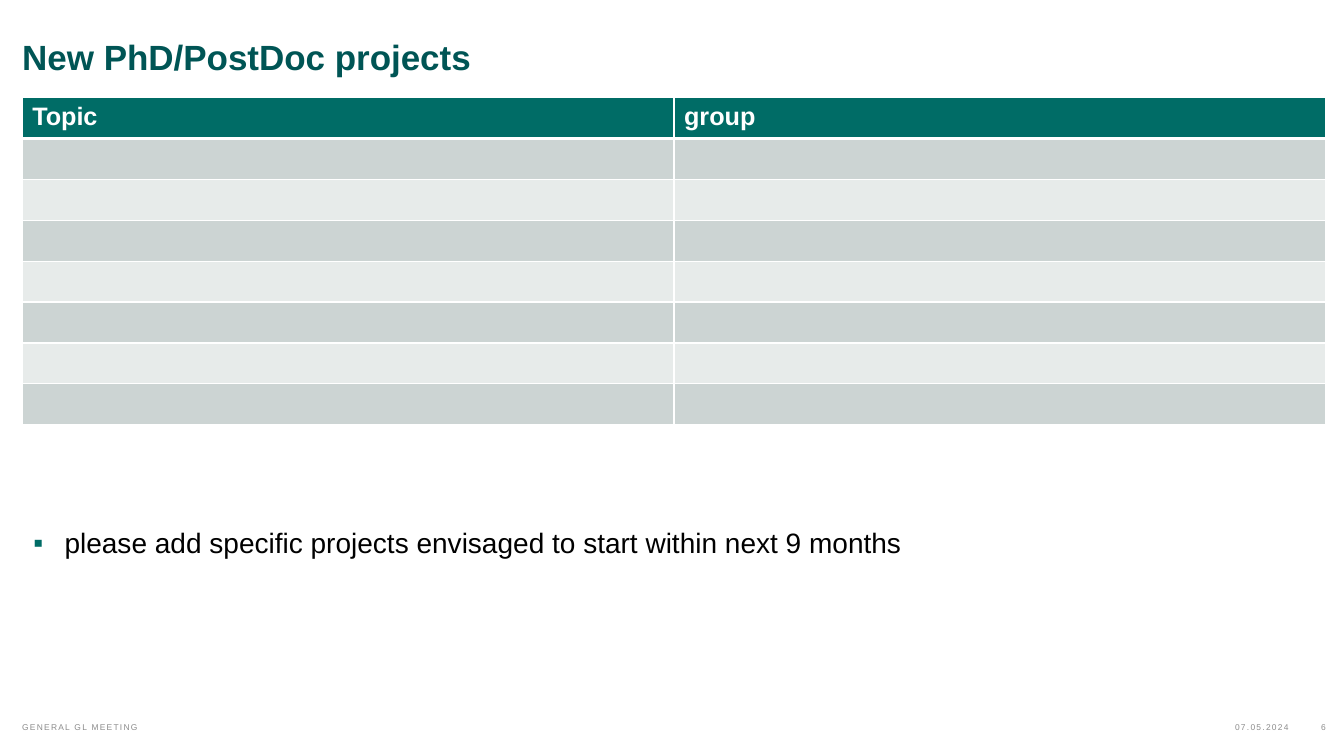
from dataclasses import dataclass

from lxml.etree import SubElement
from pptx import Presentation
from pptx.dml.color import RGBColor
from pptx.enum.text import MSO_ANCHOR, MSO_AUTO_SIZE, PP_ALIGN
from pptx.oxml import parse_xml
from pptx.oxml.ns import nsdecls, qn
from pptx.util import Inches, Pt


@dataclass(frozen=True)
class Theme:
    font: str = "Arial"
    title_color: str = "005555"
    accent: str = "006C66"
    bands: tuple = ("CCD4D3", "E7EBEA")
    white: str = "FFFFFF"
    text: str = "000000"
    muted: str = "8C8C8C"
    title_size: float = 25
    body_size: float = 20
    table_size: float = 18
    footer_size: float = 6


THEME = Theme()
LEFT = 0.22
CONTENT_WIDTH = 12.93
BODY_ROWS = 7


def place(shape, box):
    shape.left, shape.top, shape.width, shape.height = map(Inches, box)


def prepare_frame(shape, anchor=MSO_ANCHOR.TOP, horizontal=0, vertical=0):
    """Set wrapping, anchor and insets, and return the text frame."""
    frame = shape.text_frame
    frame.word_wrap = True
    frame.auto_size = MSO_AUTO_SIZE.NONE
    frame.vertical_anchor = anchor
    frame.margin_left = frame.margin_right = Inches(horizontal)
    frame.margin_top = frame.margin_bottom = Inches(vertical)
    return frame


def add_run(paragraph, text, size, color, bold=False):
    run = paragraph.add_run()
    run.text = text
    run.font.name = THEME.font
    run.font.size = Pt(size)
    run.font.bold = bold
    run.font.color.rgb = RGBColor.from_string(color)
    return run


def fill_title(shape, box, text):
    place(shape, box)
    paragraph = prepare_frame(shape).paragraphs[0]
    paragraph.alignment = PP_ALIGN.LEFT
    paragraph.line_spacing = Pt(28)
    paragraph.space_after = Pt(18)
    add_run(paragraph, text, THEME.title_size, THEME.title_color, bold=True)


def fill_bullet(shape, box, text):
    place(shape, box)
    frame = prepare_frame(shape, horizontal=0.11, vertical=0.05)
    paragraph = frame.paragraphs[0]
    paragraph.line_spacing = 1.5
    paragraph.space_before = Pt(0)
    properties = paragraph._p.get_or_add_pPr()
    properties.set("marL", str(Inches(0.31)))
    properties.set("indent", str(-Inches(0.31)))
    bullet_color = SubElement(properties, qn("a:buClr"))
    SubElement(bullet_color, qn("a:srgbClr"), val=THEME.accent)
    SubElement(properties, qn("a:buFont"), typeface=THEME.font)
    SubElement(properties, qn("a:buChar"), char="▪")
    add_run(paragraph, text, THEME.body_size, THEME.text)


def style_cell(cell, fill, bottom_width):
    """Fill the cell and draw its white borders."""
    cell.fill.solid()
    cell.fill.fore_color.rgb = RGBColor.from_string(fill)
    properties = cell._tc.get_or_add_tcPr()
    widths = {"lnL": 1, "lnR": 1, "lnT": 1, "lnB": bottom_width}
    for position, (side, width) in enumerate(widths.items()):
        border = parse_xml(
            f'<a:{side} {nsdecls("a")} w="{Pt(width)}"><a:solidFill>'
            f'<a:srgbClr val="{THEME.white}"/></a:solidFill></a:{side}>'
        )
        properties.insert(position, border)


def add_project_table(slide, box, headings, body_rows):
    table = slide.shapes.add_table(
        body_rows + 1, len(headings), *map(Inches, box)
    ).table
    for column, heading in enumerate(headings):
        header = table.cell(0, column)
        style_cell(header, THEME.accent, bottom_width=3)
        paragraph = header.text_frame.paragraphs[0]
        add_run(paragraph, heading, THEME.table_size, THEME.white, bold=True)
        for row in range(1, body_rows + 1):
            band = THEME.bands[(row - 1) % len(THEME.bands)]
            style_cell(table.cell(row, column), band, bottom_width=1)
        # The header's thick rule is shared with the first body row.
        table.cell(1, column)._tc.tcPr.find(qn("a:lnT")).set("w", str(Pt(3)))


def add_footer(slide, box, meeting, date, number):
    left, top, width, height = box
    number_width = 0.37
    date_width = 8.27
    number_left = left + width - number_width
    parts = (
        (meeting, left, 4, PP_ALIGN.LEFT),
        (date, number_left - date_width, date_width, PP_ALIGN.RIGHT),
        (number, number_left, number_width, PP_ALIGN.RIGHT),
    )
    for text, part_left, part_width, alignment in parts:
        part_box = (part_left, top, part_width, height)
        shape = slide.shapes.add_textbox(*map(Inches, part_box))
        paragraph = prepare_frame(shape, MSO_ANCHOR.BOTTOM).paragraphs[0]
        paragraph.alignment = alignment
        run = add_run(paragraph, text, THEME.footer_size, THEME.muted)
        run._r.get_or_add_rPr().set("spc", "90")


def build_projects_slide(presentation):
    slide = presentation.slides.add_slide(presentation.slide_layouts[1])
    fill_title(slide.shapes.title, (LEFT, 0.38, 11.01, 0.42),
               "New PhD/PostDoc projects")
    add_project_table(slide, (LEFT, 0.97, CONTENT_WIDTH, 3.24),
                      ("Topic", "group"), BODY_ROWS)
    fill_bullet(slide.placeholders[1], (LEFT, 5, 11.92, 1.16),
                "please add specific projects envisaged to start "
                "within next 9 months")
    add_footer(slide, (LEFT, 7.1, CONTENT_WIDTH, 0.16),
               "GENERAL GL MEETING", "07.05.2024", "6")


def main():
    presentation = Presentation()
    presentation.slide_width = Inches(13.33)
    presentation.slide_height = Inches(7.5)
    build_projects_slide(presentation)
    presentation.save("out.pptx")


if __name__ == "__main__":
    main()
